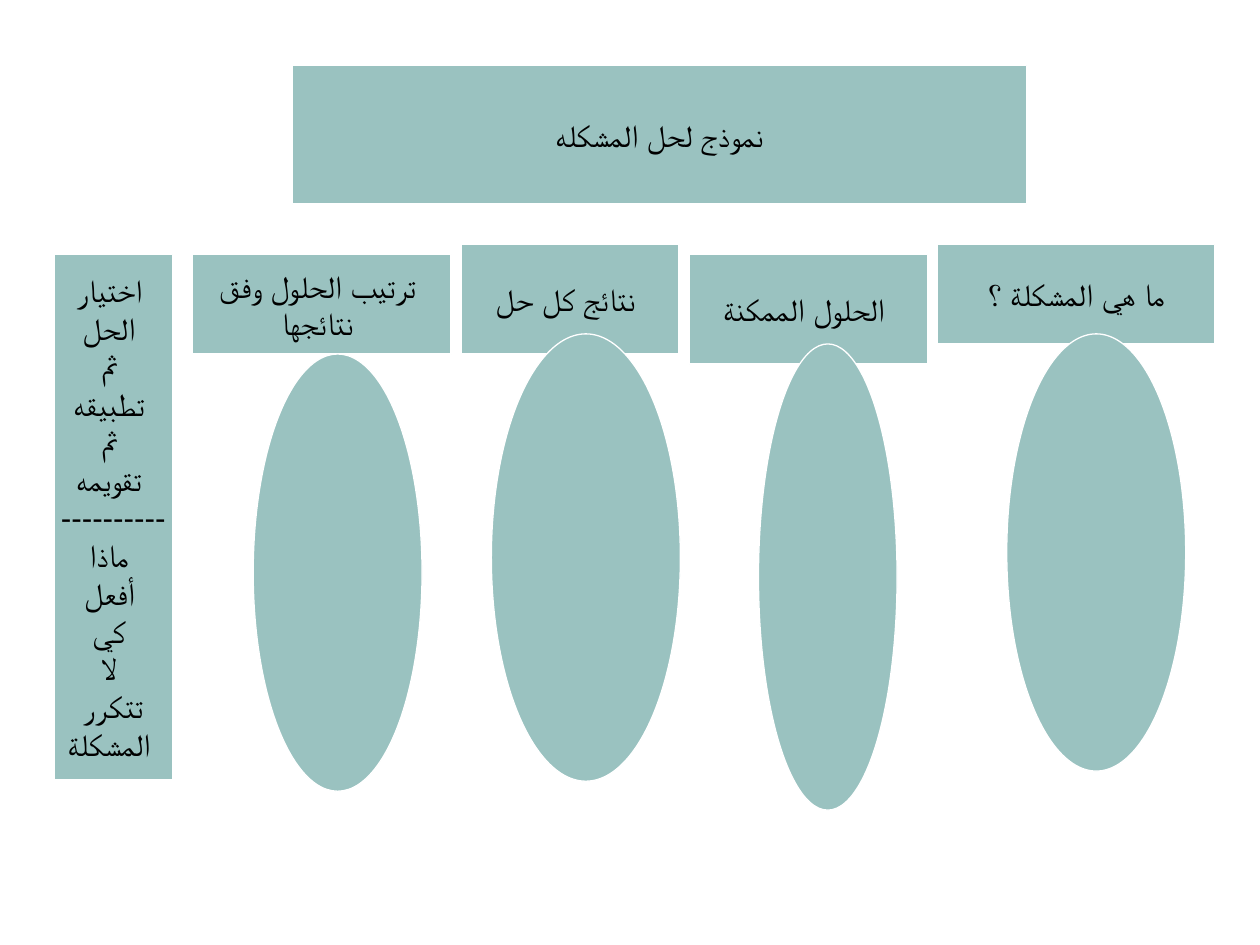
"""Build a one-slide problem-solving model with headed columns and ovals."""
from dataclasses import dataclass

from lxml import etree
from pptx import Presentation, util as u
from pptx.dml.color import RGBColor
from pptx.enum import shapes, text
from pptx.oxml.ns import qn


@dataclass(frozen=True)
class Theme:
    fill: RGBColor = RGBColor.from_string("9AC2C0")
    line: RGBColor = RGBColor.from_string("FFFFFF")
    ink: RGBColor = RGBColor.from_string("000000")
    font: str = "Arial"
    size: int = 18
    line_width: float = 0.75


class Deck:
    SCALE = 9144

    def __init__(self, prs, theme):
        self.theme = theme
        self.s = prs.slides.add_slide(prs.slide_layouts[6])

    def shape(self, kind, box):
        sp = self.s.shapes.add_shape(kind, *(v * self.SCALE for v in box))
        sp.shadow.inherit = False
        sp.fill.solid()
        sp.fill.fore_color.rgb = self.theme.fill
        sp.line.color.rgb = self.theme.line
        sp.line.width = u.Pt(self.theme.line_width)
        return sp

    def oval(self, box):
        return self.shape(shapes.MSO_SHAPE.OVAL, box)

    def label(self, box, lines):
        tf = self.shape(shapes.MSO_SHAPE.RECTANGLE, box).text_frame
        frame = {"word_wrap": False, "vertical_anchor": text.MSO_ANCHOR.MIDDLE}
        for name, value in frame.items():
            setattr(tf, name, value)
        font = {"name": self.theme.font, "size": u.Pt(self.theme.size)}
        for i, line in enumerate(lines):
            p = tf.add_paragraph() if i else tf.paragraphs[0]
            p.alignment = text.PP_ALIGN.CENTER
            r = p.add_run()
            r.text = line
            for name, value in font.items():
                setattr(r.font, name, value)
            r.font.color.rgb = self.theme.ink
            cs = etree.SubElement(r.font._element, qn("a:cs"))
            cs.set("typeface", self.theme.font)


TITLE = ((232, 52, 583, 110), ["نموذج لحل المشكله"])
COLUMNS = [
    ((744, 194, 220, 79), ["ما هي المشكلة ؟"], (799, 265, 142, 347)),
    ((547, 202, 189, 87), ["الحلول الممكنة "], (602, 273, 110, 370)),
    ((366, 194, 173, 87), ["نتائج كل حل "], (390, 265, 150, 355)),
    ((153, 202, 205, 79), ["ترتيب الحلول وفق ", "نتائجها "], (201, 281, 134, 347)),
]
FINAL_STEP = (
    (43, 202, 94, 417),
    ["اختيار ", "الحل ", "ثم ", "تطبيقه ", "ثم ", "تقويمه ", "----------",
     "ماذا ", "أفعل ", "كي ", "لا ", "تتكرر", "المشكلة "],
)


def main():
    prs = Presentation()
    prs.slide_width, prs.slide_height = 1000 * Deck.SCALE, 750 * Deck.SCALE
    deck = Deck(prs, Theme())
    deck.label(*TITLE)
    for heading, lines, oval in COLUMNS:
        deck.label(heading, lines)
        deck.oval(oval)
    deck.label(*FINAL_STEP)
    prs.save("out.pptx")


if __name__ == "__main__":
    main()
